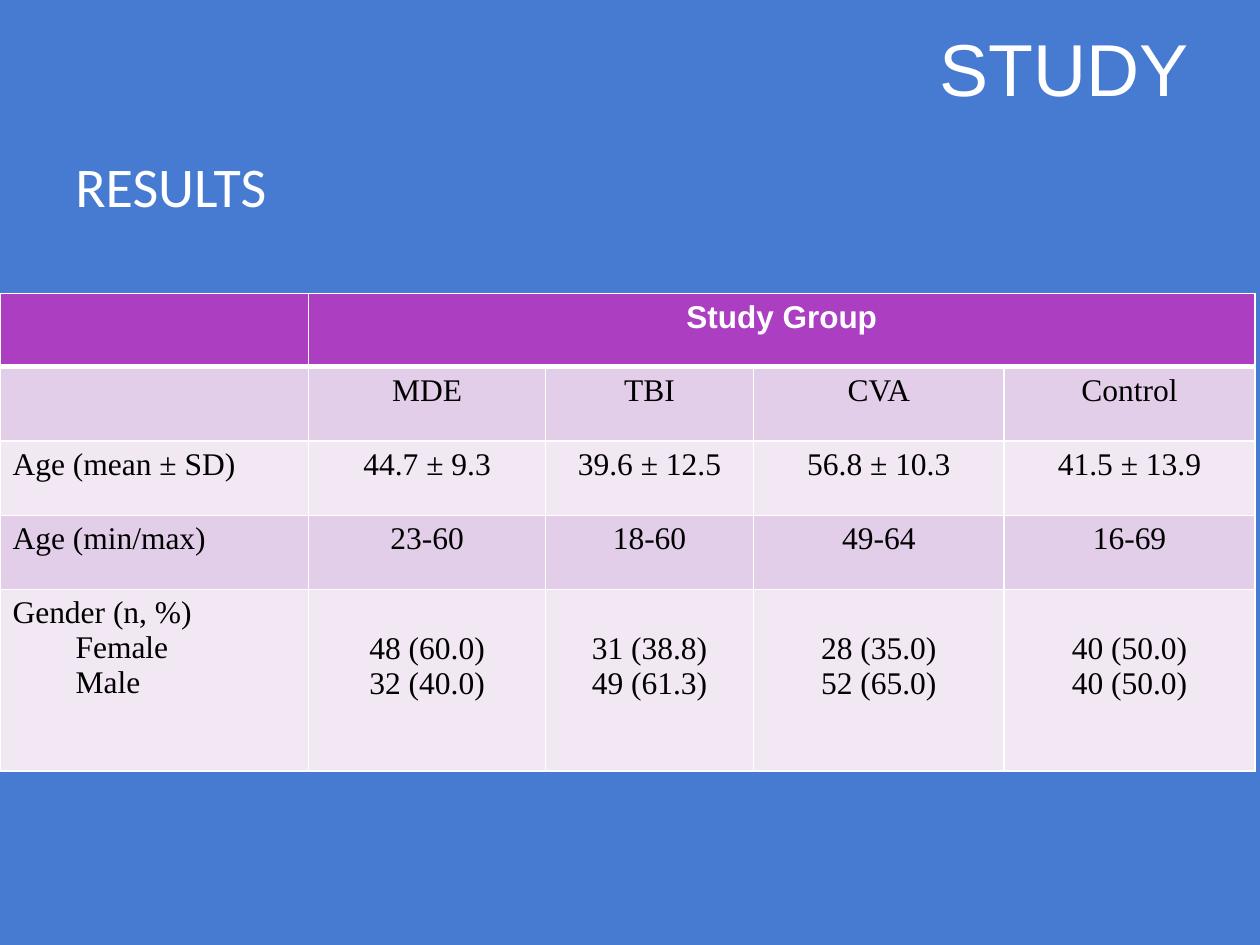
import dataclasses
import pptx
import pptx.util
import pptx.dml.color
import pptx.enum.text
import pptx.oxml
import pptx.oxml.ns

Inches = pptx.util.Inches
Pt = pptx.util.Pt
Align = pptx.enum.text.PP_ALIGN
Anchor = pptx.enum.text.MSO_ANCHOR


@dataclasses.dataclass(frozen=True)
class Theme:
    back: str = "477BD1"
    head: str = "AC3EC1"
    dark: str = "E3CEE9"
    light: str = "F1E8F4"
    white: str = "FFFFFF"
    black: str = "000000"
    title: int = 42
    label: int = 32
    body: int = 18
    sans: str = "Arial"
    serif: str = "Times New Roman"
    plain: str = "Calibri"


THEME = Theme()
WIDTHS = [2.45, 1.88, 1.65, 1.99, 1.99]
HEIGHTS = [0.58, 0.59, 0.59, 0.59, 1.44]
ROWS = [
    ["", "Study Group", "", "", ""],
    ["", "MDE", "TBI", "CVA", "Control"],
    ["Age (mean ± SD)", "44.7 ± 9.3", "39.6 ± 12.5", "56.8 ± 10.3", "41.5 ± 13.9"],
    ["Age (min/max)", "23-60", "18-60", "49-64", "16-69"],
    ["Gender (n, %)\nFemale\nMale", "48 (60.0)\n32 (40.0)", "31 (38.8)\n49 (61.3)",
     "28 (35.0)\n52 (65.0)", "40 (50.0)\n40 (50.0)"],
]


def paint(fill, color):
    fill.solid()
    fill.fore_color.rgb = pptx.dml.color.RGBColor.from_string(color)


def style(frame, size, face, color, bold=False):
    for para in frame.paragraphs:
        for run in para.runs:
            run.font.size = Pt(size)
            run.font.name = face
            run.font.bold = bold
            run.font.color.rgb = pptx.dml.color.RGBColor.from_string(color)


def add_text(slide, box, text, size, face, anchor):
    frame = slide.shapes.add_textbox(*map(Inches, box)).text_frame
    frame.word_wrap = True
    frame.vertical_anchor = anchor
    frame.text = text
    style(frame, size, face, THEME.white)


def add_edges(cell, top, base):
    props = cell._tc.get_or_add_tcPr()
    sides = {"L": 1, "R": 1, "T": top, "B": base}
    for spot, (side, width) in enumerate(sides.items()):
        edge = pptx.oxml.parse_xml(
            f'<a:ln{side} {pptx.oxml.ns.nsdecls("a")} w="{Pt(width)}">'
            f'<a:solidFill><a:srgbClr val="{THEME.white}"/></a:solidFill></a:ln{side}>')
        props.insert(spot, edge)


def fill_cell(cell, text, row, col):
    frame = cell.text_frame
    frame.text = text
    if row == 0:
        paint(cell.fill, THEME.head)
        style(frame, THEME.body, THEME.sans, THEME.white, True)
    else:
        paint(cell.fill, THEME.dark if row % 2 else THEME.light)
        style(frame, THEME.body, THEME.serif, THEME.black)
    for para in frame.paragraphs:
        para.alignment = Align.CENTER if col else Align.LEFT
    if col == 0:
        for para in frame.paragraphs[1:]:
            para.level = 1
            props = para._p.get_or_add_pPr()
            props.set("marL", str(Inches(0.5)))
            props.set("indent", "0")
    elif row == len(ROWS) - 1:
        cell.margin_top = Inches(0.33)
    add_edges(cell, 3 if row == 1 else 1, 3 if row == 0 else 1)


def add_grid(slide):
    table = slide.shapes.add_table(
        len(ROWS), len(WIDTHS), Inches(0), Inches(2.33),
        Inches(sum(WIDTHS)), Inches(sum(HEIGHTS))).table
    for col, width in zip(table.columns, WIDTHS):
        col.width = Inches(width)
    for row, height in zip(table.rows, HEIGHTS):
        row.height = Inches(height)
    for row, texts in enumerate(ROWS):
        for col, text in enumerate(texts):
            fill_cell(table.cell(row, col), text, row, col)
    table.cell(0, 1).merge(table.cell(0, len(WIDTHS) - 1))


def main():
    deck = pptx.Presentation()
    deck.slide_width = Inches(10)
    deck.slide_height = Inches(7.5)
    slide = deck.slides.add_slide(deck.slide_layouts[6])
    paint(slide.background.fill, THEME.back)
    add_text(slide, (0.5, 0.67, 8.5, 1.59), "RESULTS",
             THEME.label, THEME.plain, Anchor.MIDDLE)
    add_grid(slide)
    add_text(slide, (7.36, 0.13, 2.52, 0.81), "STUDY",
             THEME.title, THEME.sans, Anchor.TOP)
    deck.save("out.pptx")


if __name__ == "__main__":
    main()
